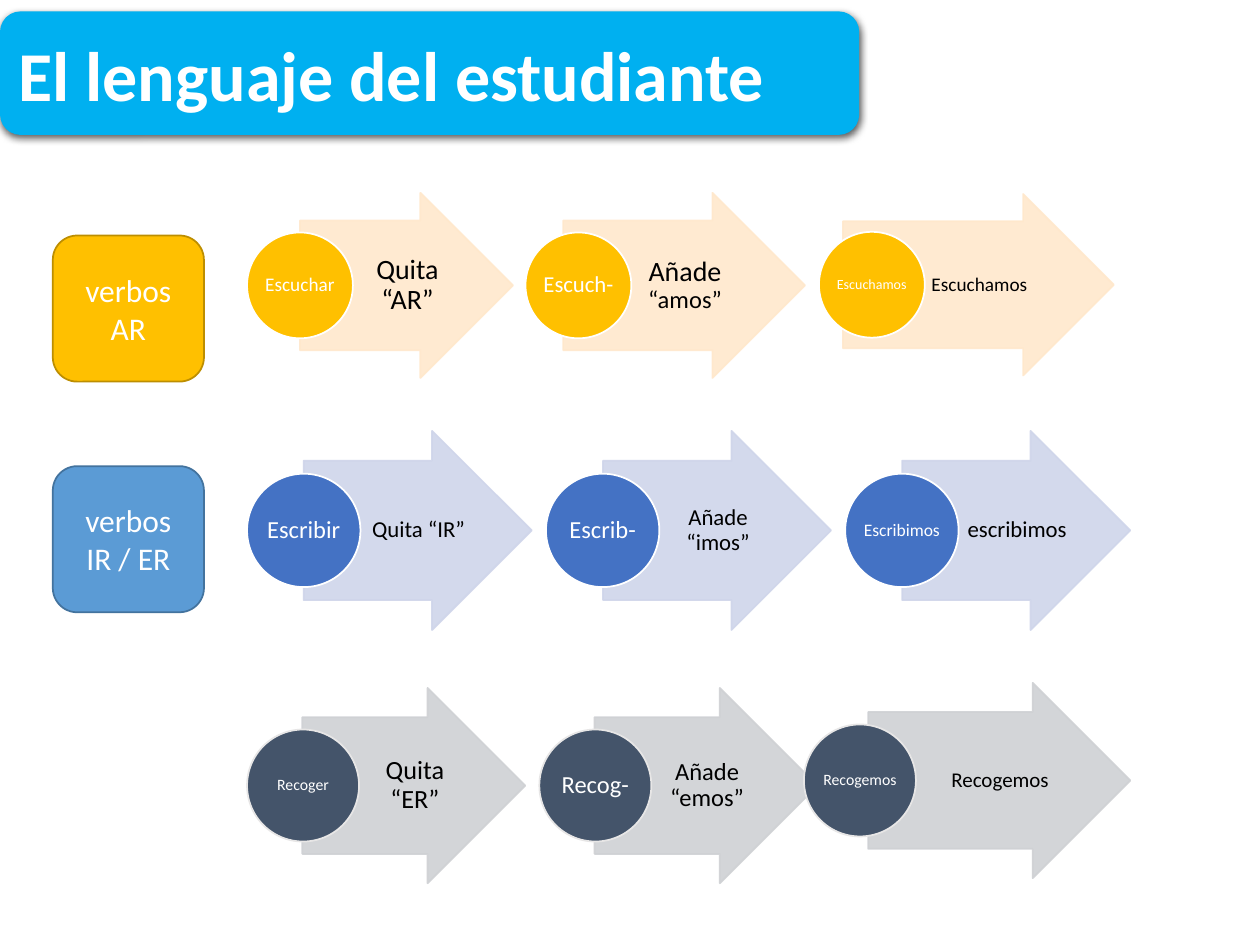
import lxml.etree
import pptx
import pptx.dml.color
import pptx.enum.shapes
import pptx.enum.text
import pptx.oxml.ns
import pptx.util

Pt = pptx.util.Pt
RGB = pptx.dml.color.RGBColor
MSO = pptx.enum.shapes.MSO_SHAPE
ALIGN = pptx.enum.text.PP_ALIGN
qn = pptx.oxml.ns.qn

WHITE, BLACK = RGB(255, 255, 255), RGB(0, 0, 0)
AMBER, AMBER_EDGE, CREAM = RGB(0xFF, 0xC0, 0x00), RGB(0xBD, 0x8E, 0x00), RGB(0xFF, 0xE8, 0xCC)
SKY, SKY_EDGE = RGB(0x5B, 0x9B, 0xD5), RGB(0x43, 0x73, 0x9E)
BLUE, LAVENDER = RGB(0x44, 0x72, 0xC4), RGB(0xCF, 0xD5, 0xEA)
SLATE, SILVER, PALE = RGB(0x44, 0x54, 0x6A), RGB(0xCF, 0xD1, 0xD4), RGB(0xE7, 0xE6, 0xE6)
CYAN = RGB(0x00, 0xB0, 0xF0)

prs = pptx.Presentation()
prs.slide_width, prs.slide_height = Pt(720), Pt(540)
s = prs.slides.add_slide(prs.slide_layouts[6])


def add_shape(kind, box, fill, edge=None):
    sp = s.shapes.add_shape(kind, *[Pt(v) for v in box])
    sp.shadow.inherit = False
    sp.fill.solid()
    sp.fill.fore_color.rgb = fill
    if edge is None:
        sp.line.fill.background()
    else:
        sp.line.color.rgb = edge
        sp.line.width = Pt(1)
    return sp


def write(sp, lines, color, align=ALIGN.CENTER, insets=(7.2, 3.6, 7.2, 3.6), spacing=1.0, bold=False):
    """Fill a shape with paragraphs, each a list of (text, size) runs."""
    tf = sp.text_frame
    left, top, right, bottom = [Pt(v) for v in insets]
    frame = {"word_wrap": True, "vertical_anchor": pptx.enum.text.MSO_ANCHOR.MIDDLE,
             "margin_left": left, "margin_top": top, "margin_right": right, "margin_bottom": bottom}
    for name, value in frame.items():
        setattr(tf, name, value)
    for i, runs in enumerate(lines):
        p = tf.paragraphs[0] if i == 0 else tf.add_paragraph()
        p.alignment, p.line_spacing = align, spacing
        for text, size in runs:
            r = p.add_run()
            r.text = text
            r.font.color.rgb = color
            for name, value in {"name": "Calibri", "size": Pt(size), "bold": bold}.items():
                setattr(r.font, name, value)


# Verb group labels
for top, ending, fill, edge in [(134.6, "AR", AMBER, AMBER_EDGE), (266.4, "IR / ER", SKY, SKY_EDGE)]:
    sp = add_shape(MSO.ROUNDED_RECTANGLE, (30.2, top, 86.4, 83.5), fill, edge)
    write(sp, [[("verbos", 18)], [(ending, 18)]], WHITE)

# Each row: circle fill and edge, arrow fill, circle diameter, steps.
# Each step: circle left, circle text and size, arrow box, arrow runs.
rows = [
    (AMBER, WHITE, CREAM, 60.5, [
        (141.2, "Escuchar", 11, (171.4, 110.2, 121.7, 105.8), [("Quita “AR”", 16)]),
        (300.3, "Escuch-", 13, (321.8, 110.2, 138.2, 105.8), [("Añade", 16), (" “amos”", 14)]),
        (468, "Escuchamos", 8, (481.7, 110.9, 154.8, 103.7), [("Escuchamos", 11)])]),
    (BLUE, WHITE, LAVENDER, 64.8, [
        (141.2, "Escribir", 14, (173.5, 246.2, 130.3, 113.8), [("Quita “IR”", 13)]),
        (312, "Escrib-", 14, (344.6, 246.2, 130.3, 113.8), [("Añade “imos”", 13)]),
        (483, "Escribimos", 10, (515.5, 246.2, 130.3, 113.8), [("escribimos", 13)])]),
    (SLATE, PALE, SILVER, 64, [
        (141.2, "Recoger", 9, (172.8, 393.1, 127.4, 111.6), [("Quita “ER”", 15)]),
        (308.2, "Recog-", 14, (339.8, 393.1, 127.4, 111.6), [("Añade “emos”", 14)]),
        (459.4, "Recogemos", 9, (496.1, 390.2, 149.8, 111.6), [("Recogemos", 12)])]),
]
for fill, edge, tint, d, steps in rows:
    for left, word, size, box, runs in steps:
        x, y, w, h = box
        sp = add_shape(MSO.RIGHT_ARROW, box, tint, tint)
        sp.adjustments[0], sp.adjustments[1] = 0.7, 0.5
        for clr in sp._element.spPr.iter(qn("a:srgbClr")):
            lxml.etree.SubElement(clr, qn("a:alpha"), val="90000")
        # The text covers the middle half of the arrow, clear of the circle
        label = (x + w / 4, y + 0.15 * h, w / 2, 0.7 * h)
        sp = s.shapes.add_textbox(*[Pt(v) for v in label])
        write(sp, [runs], BLACK, insets=(2.5, 0.7, 1.4, 0.7), spacing=0.9)
        sp = add_shape(MSO.OVAL, (left, y + (h - d) / 2, d, d), fill, edge)
        write(sp, [[(word, size)]], WHITE, insets=(0.5, 0.5, 0.5, 0.5), spacing=0.9)

# Title banner with a soft shadow below
sp = add_shape(MSO.ROUNDED_RECTANGLE, (0, 6.5, 491, 70.6), CYAN)
write(sp, [[("El lenguaje del estudiante", 40)]], WHITE, align=ALIGN.LEFT, bold=True)
effects = sp._element.spPr.find(qn("a:effectLst"))
shadow = lxml.etree.SubElement(effects, qn("a:outerShdw"), blurRad=str(Pt(4.5)), dist=str(Pt(1.5)),
                               dir="5400000", rotWithShape="0")
clr = lxml.etree.SubElement(shadow, qn("a:srgbClr"), val=str(BLACK))
lxml.etree.SubElement(clr, qn("a:alpha"), val="63000")

prs.save("out.pptx")
